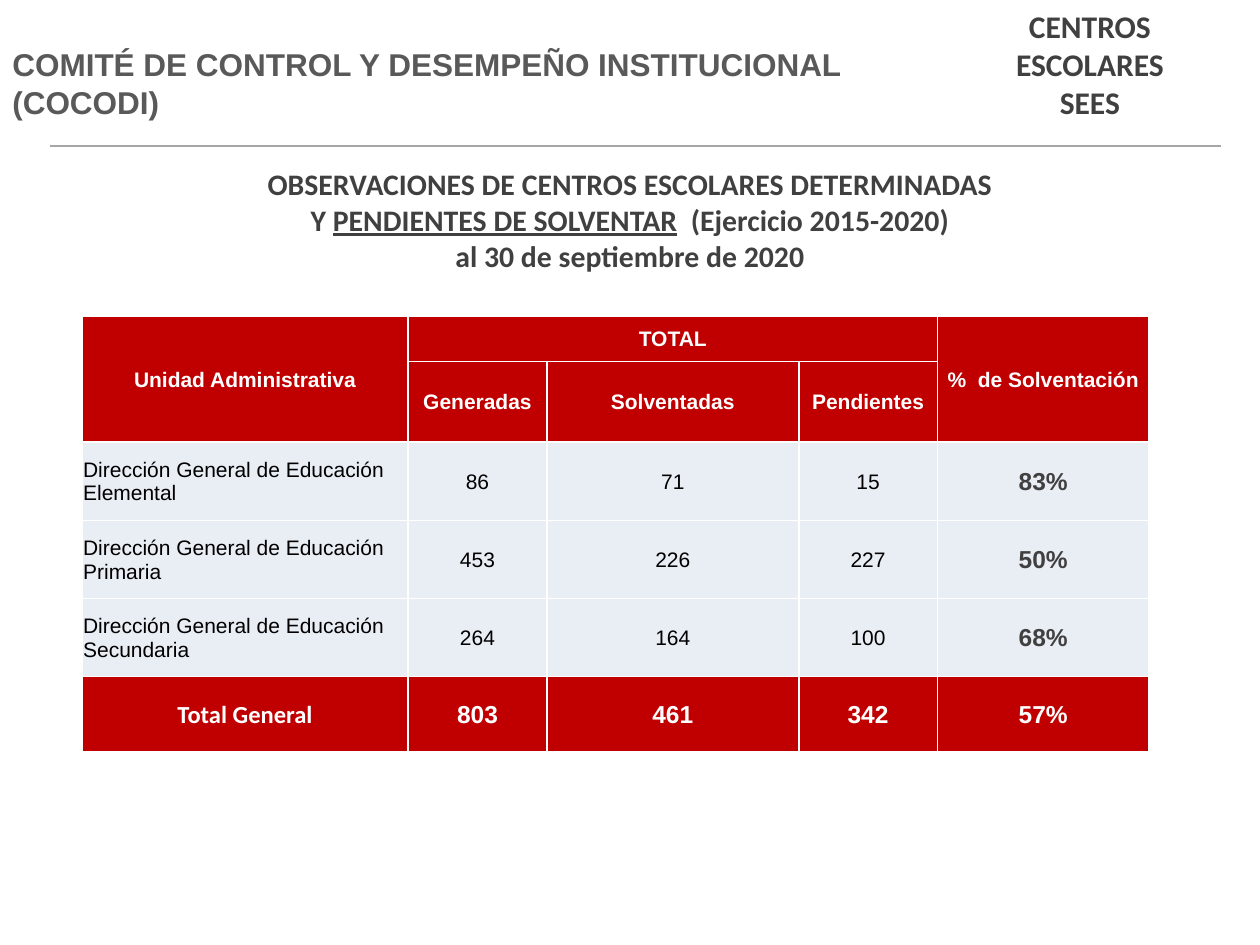
from lxml.etree import SubElement
from pptx import Presentation
from pptx.dml.color import RGBColor
from pptx.enum.shapes import MSO_CONNECTOR as Connector, MSO_SHAPE as Shape
from pptx.enum.text import MSO_ANCHOR as Anchor, PP_ALIGN as Align
from pptx.oxml.ns import qn
from pptx.util import Inches, Pt

WHITE = RGBColor(0xFF, 0xFF, 0xFF)
BLACK = RGBColor(0, 0, 0)
DARK = RGBColor(0x40, 0x40, 0x40)
GRAY = RGBColor(0x59, 0x59, 0x59)
RULE = RGBColor(0xA6, 0xA6, 0xA6)
RED = RGBColor(0xC0, 0, 0)
PALE = RGBColor(0xE9, 0xED, 0xF4)

COLUMN_WIDTHS = [2.59, 1.1, 2, 1.1, 1.68]
ROW_HEIGHTS = [0.36, 0.64, 0.62, 0.62, 0.62, 0.6]
HEADINGS = [
    ["Unidad Administrativa", "TOTAL", None, None, "%  de Solventación"],
    [None, "Generadas", "Solventadas", "Pendientes", None],
]
UNITS = [
    ["Dirección General de Educación Elemental", "86", "71", "15", "83%"],
    ["Dirección General de Educación Primaria", "453", "226", "227", "50%"],
    ["Dirección General de Educación Secundaria", "264", "164", "100", "68%"],
]
TOTALS = ["Total General", "803", "461", "342", "57%"]


def add_run(paragraph, text, size, color, font="Calibri", bold=True, underline=None):
    """Append one formatted run to a paragraph."""
    run = paragraph.add_run()
    run.text = text
    run.font.name = font
    run.font.size = Pt(size)
    run.font.bold = bold
    run.font.underline = underline
    run.font.color.rgb = color


def add_panel(slide, box):
    """Add a white rectangle and return its text frame."""
    panel = slide.shapes.add_shape(Shape.RECTANGLE, *map(Inches, box))
    panel.shadow.inherit = False
    panel.fill.solid()
    panel.fill.fore_color.rgb = WHITE
    panel.line.fill.background()
    panel.text_frame.word_wrap = True
    panel.text_frame.vertical_anchor = Anchor.MIDDLE
    return panel.text_frame


def add_area(slide, box):
    """Place the area label at the top right."""
    area = add_panel(slide, box)
    area.margin_left, area.margin_right = Inches(0.2), Inches(0.35)
    area.paragraphs[0].alignment = Align.CENTER
    add_run(area.paragraphs[0], "CENTROS ESCOLARES", 18, DARK)
    entity = area.add_paragraph()
    entity.alignment = Align.CENTER
    add_run(entity, "SEES", 18, DARK)


def add_committee(slide, box):
    """Place the committee name at the top left."""
    name = add_panel(slide, box).paragraphs[0]
    name.alignment = Align.LEFT
    add_run(name, "COMITÉ DE CONTROL Y DESEMPEÑO INSTITUCIONAL (COCODI)", 18, GRAY, "Arial")


def add_rule(slide, left, top, width):
    """Draw the horizontal rule below the header."""
    rule = slide.shapes.add_connector(
        Connector.STRAIGHT, Inches(left), Inches(top), Inches(left + width), Inches(top))
    rule.line.color.rgb = RULE
    rule.line.width = Pt(1.5)
    SubElement(rule._element.spPr, qn("a:effectLst"))


def add_heading(slide, box):
    """Place the three centred lines that introduce the table."""
    frame = slide.shapes.add_textbox(*map(Inches, box)).text_frame
    frame.word_wrap = True
    lines = [
        [("OBSERVACIONES DE CENTROS ESCOLARES DETERMINADAS", None)],
        [("Y ", None), ("PENDIENTES DE SOLVENTAR", True), ("  (Ejercicio 2015-2020)", None)],
        [("al 30 de septiembre de 2020", None)],
    ]
    for index, runs in enumerate(lines):
        line = frame.add_paragraph() if index else frame.paragraphs[0]
        line.alignment = Align.CENTER
        for text, underline in runs:
            add_run(line, text, 17, DARK, underline=underline)


def style_cell(cell, fill):
    """Give a cell white borders, narrow margins and a fill."""
    properties = cell._tc.get_or_add_tcPr()
    for side in ("lnL", "lnR", "lnT", "lnB"):
        border = SubElement(properties, qn(f"a:{side}"), w=str(Pt(1)))
        color = SubElement(SubElement(border, qn("a:solidFill")), qn("a:srgbClr"))
        color.set("val", str(WHITE))
    cell.fill.solid()
    cell.fill.fore_color.rgb = fill
    cell.margin_left = cell.margin_right = cell.margin_top = Inches(0.01)
    cell.margin_bottom = 0
    cell.vertical_anchor = Anchor.MIDDLE


def write_cell(cell, text, align, size, color, font="Arial", bold=True):
    """Write one aligned run into a cell."""
    paragraph = cell.text_frame.paragraphs[0]
    paragraph.alignment = align
    add_run(paragraph, text, size, color, font, bold)


def add_observations(slide, box):
    """Build the table of observations by administrative unit."""
    rows = HEADINGS + UNITS + [TOTALS]
    table = slide.shapes.add_table(len(rows), len(TOTALS), *map(Inches, box)).table
    for column, width in zip(table.columns, COLUMN_WIDTHS):
        column.width = Inches(width)
    for row, height in zip(table.rows, ROW_HEIGHTS):
        row.height = Inches(height)
    last_column = len(TOTALS) - 1
    for r, texts in enumerate(rows):
        is_unit = texts in UNITS
        for c, text in enumerate(texts):
            cell = table.cell(r, c)
            style_cell(cell, PALE if is_unit else RED)
            if text is None:
                continue
            if texts is TOTALS:
                write_cell(cell, text, Align.CENTER, 14, WHITE, "Arial" if c else "Calibri")
            elif not is_unit:
                write_cell(cell, text, Align.CENTER, 12, WHITE)
            elif c == last_column:
                write_cell(cell, text, Align.CENTER, 14, DARK)
            else:
                write_cell(cell, text, Align.CENTER if c else Align.LEFT, 12, BLACK, bold=False)
    for column in (0, last_column):
        table.cell(0, column).merge(table.cell(1, column))
    table.cell(0, 1).merge(table.cell(0, 3))


def main():
    """Build and save the slide."""
    presentation = Presentation()
    presentation.slide_width, presentation.slide_height = Inches(10), Inches(7.5)
    slide = presentation.slides.add_slide(presentation.slide_layouts[6])
    add_area(slide, (7.45, 0, 2.55, 1.01))
    add_heading(slide, (0, 1.27, 10, 0.96))
    add_observations(slide, (0.65, 2.51, 8.48, 3.48))
    add_committee(slide, (0, 0, 7.76, 1.31))
    add_rule(slide, 0.4, 1.16, 9.29)
    presentation.save("out.pptx")


if __name__ == "__main__":
    main()
